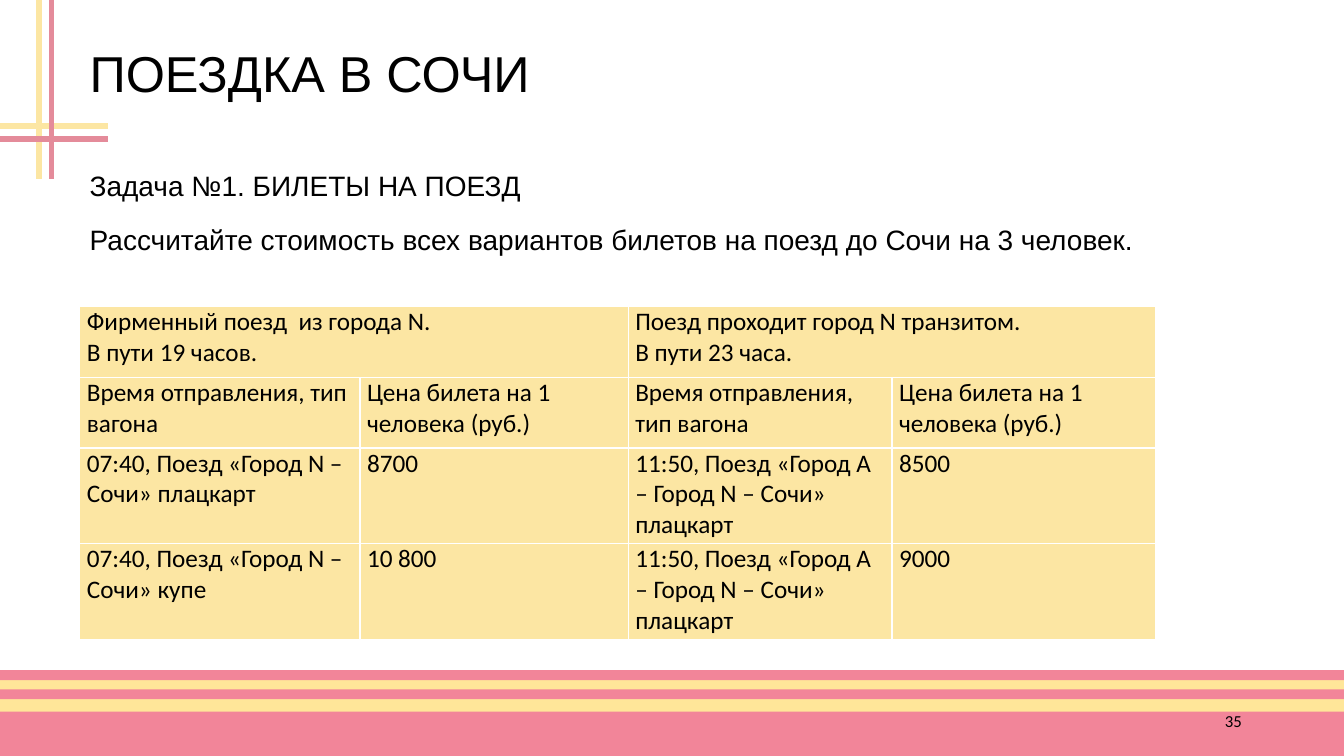
from lxml.etree import SubElement
from pptx import Presentation
from pptx.dml.color import RGBColor
from pptx.enum.shapes import MSO_CONNECTOR, MSO_SHAPE
from pptx.enum.text import MSO_ANCHOR, PP_ALIGN
from pptx.oxml.ns import qn
from pptx.util import Cm, Pt

WIDE, HIGH = 33.87, 19.05
BLACK, WHITE = "000000", "FFFFFF"
CREAM, ROSE = "FCE6A3", "E48B9A"
GOLD, PINK = "FFE699", "F28599"

COLS = [7.06, 6.76, 6.65, 6.65]
ROWS = [1.78, 1.78, 2.41, 2.41]
HEADS = ["Время отправления, тип вагона", "Цена билета на 1 человека (руб.)"]
LOCAL = ["Фирменный поезд  из города N.", "В пути 19 часов."]
TRANSIT = ["Поезд проходит город N транзитом.", "В пути 23 часа."]
THROUGH = "11:50, Поезд «Город A – Город N – Сочи» плацкарт"
FARES = [
    HEADS * 2,
    ["07:40, Поезд «Город N – Сочи» плацкарт", "8700", THROUGH, "8500"],
    ["07:40, Поезд «Город N – Сочи» купе", "10 800", THROUGH, "9000"],
]


def paint(color, code):
    color.rgb = RGBColor.from_string(code)


def write(frame, lines, size, font, space=None, after=0, align=None):
    frame.word_wrap = True
    for i, line in enumerate(lines):
        para = frame.paragraphs[0] if i == 0 else frame.add_paragraph()
        para.alignment = align
        para.line_spacing = space
        para.space_after = Pt(after)
        run = para.add_run()
        run.text = line
        run.font.size = Pt(size)
        run.font.name = font
        paint(run.font.color, BLACK)


def add_text(slide, box, lines, size, font, **style):
    frame = slide.shapes.add_textbox(*map(Cm, box)).text_frame
    frame.vertical_anchor = MSO_ANCHOR.MIDDLE
    write(frame, lines, size, font, **style)


def add_band(slide, top, height, code):
    band = slide.shapes.add_shape(
        MSO_SHAPE.RECTANGLE, 0, Cm(top), Cm(WIDE), Cm(height))
    band.shadow.inherit = False
    band.fill.solid()
    paint(band.fill.fore_color, code)
    band.line.fill.background()


def add_line(slide, ends, code):
    line = slide.shapes.add_connector(MSO_CONNECTOR.STRAIGHT, *map(Cm, ends))
    line.line.width = Pt(4)
    paint(line.line.color, code)
    SubElement(line._element.spPr, qn("a:effectLst"))


def add_edges(cell):
    props = cell._tc.get_or_add_tcPr()
    for i, side in enumerate(("lnL", "lnR", "lnT", "lnB")):
        edge = props.makeelement(qn("a:" + side), {"w": str(Pt(1))})
        fill = SubElement(edge, qn("a:solidFill"))
        SubElement(fill, qn("a:srgbClr"), val=WHITE)
        props.insert(i, edge)


def fill_cell(cell, lines):
    cell.margin_left = cell.margin_right = Cm(0.18)
    cell.margin_top = cell.margin_bottom = 0
    cell.fill.solid()
    paint(cell.fill.fore_color, CREAM)
    add_edges(cell)
    write(cell.text_frame, lines, 18, "Calibri")


def add_fares(slide):
    table = slide.shapes.add_table(
        len(ROWS), len(COLS), Cm(2.01), Cm(7.73),
        Cm(sum(COLS)), Cm(sum(ROWS))).table
    for col, width in zip(table.columns, COLS):
        col.width = Cm(width)
    for row, height in zip(table.rows, ROWS):
        row.height = Cm(height)
    grid = [[LOCAL, [], TRANSIT, []]]
    grid += [[[text] for text in row] for row in FARES]
    for r, row in enumerate(grid):
        for c, lines in enumerate(row):
            fill_cell(table.cell(r, c), lines)
    for c in (0, 2):
        table.cell(0, c).merge(table.cell(0, c + 1))


def main():
    deck = Presentation()
    deck.slide_width, deck.slide_height = Cm(WIDE), Cm(HIGH)
    slide = deck.slides.add_slide(deck.slide_layouts[6])

    add_band(slide, 16.9, HIGH - 16.9, GOLD)
    add_band(slide, 17.93, HIGH - 17.93, PINK)
    for top in (17.37, 16.89):
        add_band(slide, top, 0.25, PINK)
    for x, y, code in ((0.99, 3.18, CREAM), (1.3, 3.5, ROSE)):
        add_line(slide, (0, y, 2.72, y), code)
        add_line(slide, (x, 0, x, 4.5), code)

    add_text(slide, (2.01, 0.99, 29.54, 1.85), ["ПОЕЗДКА В СОЧИ"],
             36, "Arial", space=0.9)
    add_text(slide, (2.01, 3.99, 29.54, 2.64),
             ["Задача №1. БИЛЕТЫ НА ПОЕЗД",
              "Рассчитайте стоимость всех вариантов билетов на поезд "
              "до Сочи на 3 человек."],
             20, "Arial", space=1.1, after=12)
    add_text(slide, (23.93, 17.65, 7.62, 1.02), ["35"],
             12, "Calibri", align=PP_ALIGN.RIGHT)
    add_fares(slide)
    deck.save("out.pptx")


if __name__ == "__main__":
    main()
